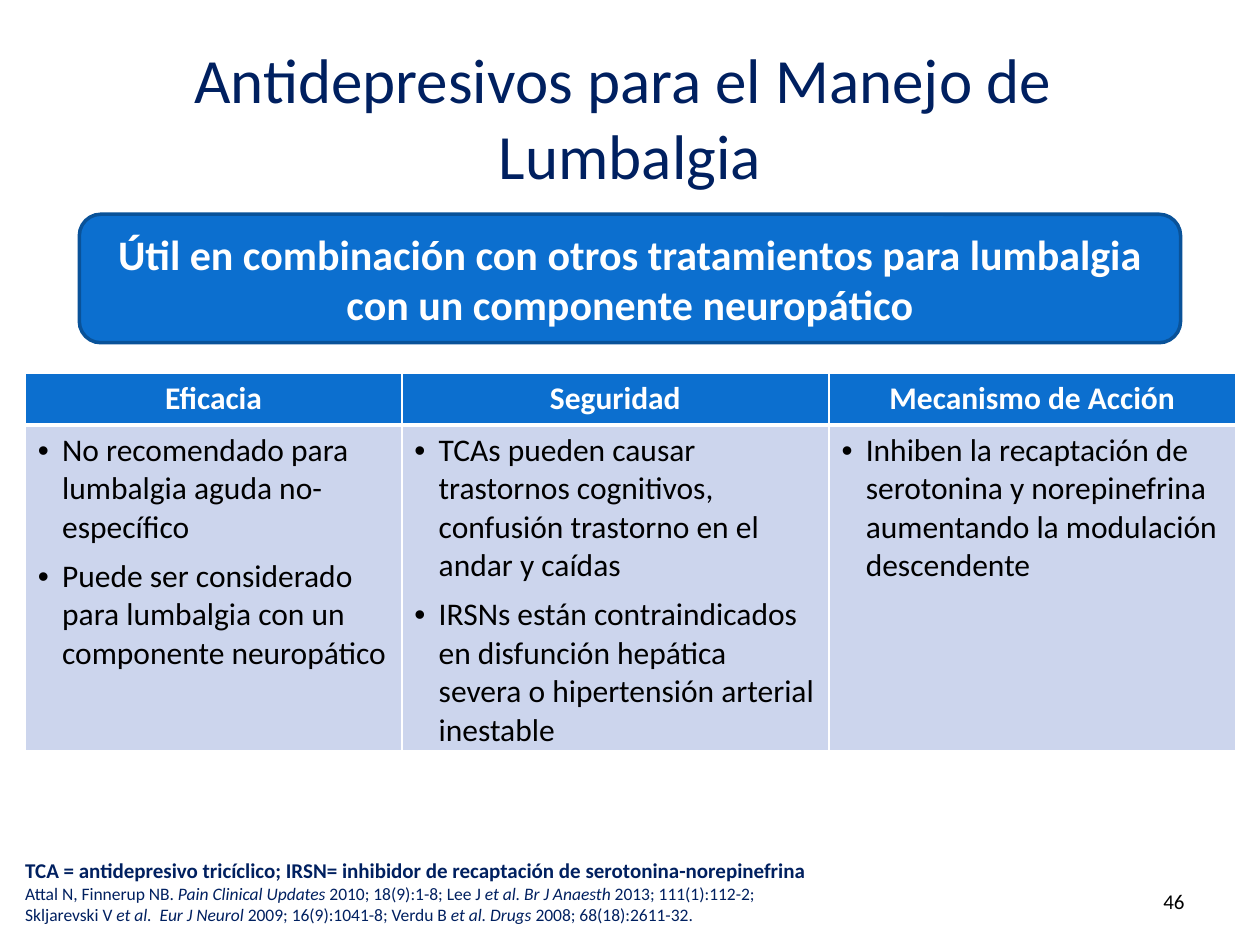
from copy import deepcopy
from lxml import etree
from pptx import Presentation
from pptx.dml.color import RGBColor
from pptx.enum.shapes import MSO_SHAPE
from pptx.enum.text import MSO_ANCHOR, PP_ALIGN
from pptx.oxml.ns import qn
from pptx.util import Cm, Pt

LEFT, CENTER, RIGHT = PP_ALIGN.LEFT, PP_ALIGN.CENTER, PP_ALIGN.RIGHT
MIDDLE, BOTTOM = MSO_ANCHOR.MIDDLE, MSO_ANCHOR.BOTTOM
ROUNDED = MSO_SHAPE.ROUNDED_RECTANGLE
FONT = "Calibri"
COLORS = {"navy": "002060", "blue": "0C6FCF", "edge": "095299",
          "pale": "CCD5ED", "white": "FFFFFF", "black": "000000"}

TITLE = "Antidepresivos para el Manejo de \nLumbalgia"
BANNER = ("Útil en combinación con otros tratamientos para lumbalgia "
          "con un componente neuropático")
COLUMNS = [
    ("Eficacia", 7.59, [
        "No recomendado para lumbalgia aguda no-específico",
        "Puede ser considerado para lumbalgia con un componente neuropático"]),
    ("Seguridad", 8.61, [
        "TCAs pueden causar trastornos cognitivos, confusión trastorno en el andar y caídas",
        "IRSNs están contraindicados en disfunción hepática severa o "
        "hipertensión arterial inestable"]),
    ("Mecanismo de Acción", 8.2, [
        "Inhiben la recaptación de serotonina y norepinefrina aumentando "
        "la modulación descendente"]),
]
ROW_HEIGHTS = [1.04, 6.55]
ABBREVIATIONS = ("TCA = antidepresivo tricíclico; IRSN= inhibidor de recaptación "
                 "de serotonina-norepinefrina")
REFERENCES = ("Attal N, Finnerup NB. *Pain Clinical Updates *2010; 18(9):1-8; Lee J "
              "*et al. Br J Anaesth* 2013; 111(1):112-2; \nSkljarevski V "
              "*et al.  Eur J Neurol* 2009; 16(9):1041-8; Verdu B "
              "*et al. Drugs *2008; 68(18):2611-32.")
PAGE = "46"


def rgb(name):
    return RGBColor.from_string(COLORS[name])


def write(p, text, size=18, color="navy", bold=False, align=LEFT, bullet=False, after=0):
    p.alignment = align
    p.space_after = Pt(after)
    if bullet:
        pPr = p._p.get_or_add_pPr()
        pPr.set("marL", str(Cm(0.49)))
        pPr.set("indent", str(-Cm(0.49)))
        etree.SubElement(pPr, qn("a:buFont"), typeface="Arial")
        etree.SubElement(pPr, qn("a:buChar"), char="•")
    for i, part in enumerate(text.split("*")):
        for j, line in enumerate(part.split("\n")):
            if j:
                p.add_line_break()
                p._p[-1].append(deepcopy(r._r.get_or_add_rPr()))
            r = p.add_run()
            r.text = line
            r.font.name, r.font.size = FONT, Pt(size)
            r.font.bold, r.font.italic = bold, i % 2 == 1
            r.font.color.rgb = rgb(color)


def add_box(s, left, top, width, height, anchor=MIDDLE):
    sp = s.shapes.add_textbox(Cm(left), Cm(top), Cm(width), Cm(height))
    tf = sp.text_frame
    tf.word_wrap = True
    tf.vertical_anchor = anchor
    return tf


def style_cell(cell, fill, bottom):
    tcPr = cell._tc.get_or_add_tcPr()
    for side, width in (("L", 1), ("R", 1), ("T", 1), ("B", bottom)):
        ln = etree.SubElement(tcPr, qn(f"a:ln{side}"), w=str(Pt(width)))
        solid = etree.SubElement(ln, qn("a:solidFill"))
        etree.SubElement(solid, qn("a:srgbClr"), val=COLORS["white"])
    cell.fill.solid()
    cell.fill.fore_color.rgb = rgb(fill)


def add_columns(s):
    total = sum(width for _, width, _ in COLUMNS)
    table = s.shapes.add_table(2, len(COLUMNS), Cm(0.51), Cm(7.53),
                               Cm(total), Cm(sum(ROW_HEIGHTS))).table
    for row, height in zip(table.rows, ROW_HEIGHTS):
        row.height = Cm(height)
    for c, (heading, width, points) in enumerate(COLUMNS):
        table.columns[c].width = Cm(width)
        head, body = table.cell(0, c), table.cell(1, c)
        style_cell(head, "blue", 3)
        style_cell(body, "pale", 1)
        write(head.text_frame.paragraphs[0], heading, color="white", bold=True, align=CENTER)
        tf = body.text_frame
        for i, point in enumerate(points):
            p = tf.add_paragraph() if i else tf.paragraphs[0]
            write(p, point, color="black", bullet=True,
                  after=6 if i < len(points) - 1 else 0)


def add_banner(s):
    sp = s.shapes.add_shape(ROUNDED, Cm(1.6), Cm(4.32), Cm(22.2), Cm(2.59))
    sp.shadow.inherit = False
    sp.fill.solid()
    sp.fill.fore_color.rgb = rgb("blue")
    sp.line.color.rgb = rgb("edge")
    sp.line.width = Pt(2)
    tf = sp.text_frame
    tf.word_wrap = True
    tf.vertical_anchor = MIDDLE
    write(tf.paragraphs[0], BANNER, size=24, color="white", bold=True, align=CENTER)


def main():
    prs = Presentation()
    prs.slide_width, prs.slide_height = Cm(25.4), Cm(19.05)
    s = prs.slides.add_slide(prs.slide_layouts[6])

    tf = add_box(s, 1.27, 0.76, 22.86, 3.18)
    write(tf.paragraphs[0], TITLE, size=36, align=CENTER)

    tf = add_box(s, 18.21, 17.65, 5.92, 1.02)
    write(tf.paragraphs[0], PAGE, size=12, color="black", align=RIGHT)

    tf = add_box(s, 0.51, 17.27, 23.62, 1.37, anchor=BOTTOM)
    tf.margin_left = tf.margin_right = tf.margin_top = tf.margin_bottom = 0
    write(tf.paragraphs[0], ABBREVIATIONS, size=12, bold=True)
    write(tf.add_paragraph(), REFERENCES, size=10)

    add_columns(s)
    add_banner(s)
    prs.save("out.pptx")


if __name__ == "__main__":
    main()
